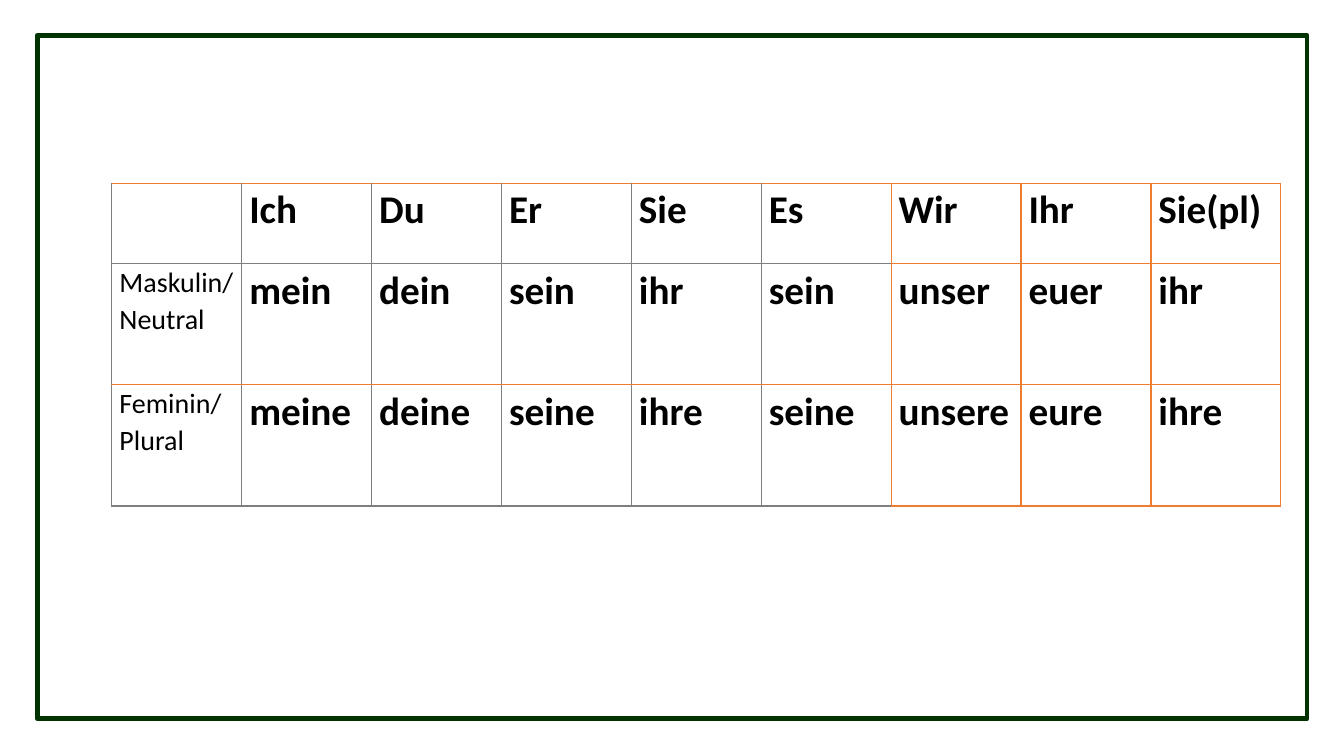
from lxml import etree
from pptx import Presentation
from pptx import util as u
from pptx.dml.color import RGBColor
from pptx.enum import shapes, text
from pptx.oxml.ns import qn

ROWS = [
    ["", "Ich", "Du", "Er", "Sie", "Es", "Wir", "Ihr", "Sie(pl)"],
    ["Maskulin/Neutral", "mein", "dein", "sein", "ihr", "sein", "unser", "euer", "ihr"],
    ["Feminin/ Plural", "meine", "deine", "seine", "ihre", "seine", "unsere", "eure", "ihre"],
]
HEIGHTS = [2.03, 3.05, 3.05]
SPLIT = 6


def color(code):
    return RGBColor.from_string(code)


class Painter:
    font = "Calibri"
    ink = "000000"
    paper = "FFFFFF"
    green = "003300"
    orange = "ED7D31"
    gray = "7F7F7F"

    def __init__(self, slide):
        self.slide = slide

    def frame(self, left, top, width, height):
        box = self.slide.shapes.add_shape(
            shapes.MSO_SHAPE.RECTANGLE, u.Cm(left), u.Cm(top), u.Cm(width), u.Cm(height))
        box.shadow.inherit = False
        box.fill.solid()
        box.fill.fore_color.rgb = color(self.paper)
        box.line.color.rgb = color(self.green)
        box.line.width = u.Pt(3.5)

    def edge(self, cell, side, code):
        line = etree.SubElement(cell._tc.get_or_add_tcPr(), qn("a:ln" + side), w=str(u.Pt(1)))
        fill = etree.SubElement(line, qn("a:solidFill"))
        etree.SubElement(fill, qn("a:srgbClr"), val=code)

    def tone(self, col):
        return self.gray if col < SPLIT else self.orange

    def borders(self, cell, row, col):
        tone = self.tone(col)
        lines = [self.orange, tone, self.orange, tone]
        self.edge(cell, "L", tone)
        self.edge(cell, "R", self.tone(col + 1))
        self.edge(cell, "T", lines[row])
        self.edge(cell, "B", lines[row + 1])

    def label(self, cell, words, size, bold):
        cell.margin_left = cell.margin_right = u.Cm(0.19)
        cell.margin_top = cell.margin_bottom = 0
        cell.vertical_anchor = text.MSO_ANCHOR.TOP
        cell.text = words
        para = cell.text_frame.paragraphs[0]
        para.line_spacing = 1.07
        para.font.name = self.font
        para.font.size = u.Pt(size)
        para.font.bold = bold
        para.font.color.rgb = color(self.ink)

    def table(self, rows, left, top, width, heights):
        count = len(rows[0])
        grid = self.slide.shapes.add_table(
            len(rows), count, u.Cm(left), u.Cm(top), u.Cm(width), u.Cm(sum(heights))).table
        grid.first_row = grid.horz_banding = False
        for column in grid.columns:
            column.width = u.Cm(width / count)
        for r, (words, height) in enumerate(zip(rows, heights)):
            grid.rows[r].height = u.Cm(height)
            for c, word in enumerate(words):
                cell = grid.cell(r, c)
                self.borders(cell, r, c)
                cell.fill.background()
                self.label(cell, word, 28 if c else 20, c > 0)


def main():
    deck = Presentation()
    deck.slide_width, deck.slide_height = u.Cm(33.87), u.Cm(19.05)
    painter = Painter(deck.slides.add_slide(deck.slide_layouts[6]))
    painter.frame(0.94, 0.89, 32, 17.22)
    painter.table(ROWS, 2.82, 4.62, 29.46, HEIGHTS)
    deck.save("out.pptx")


if __name__ == "__main__":
    main()
